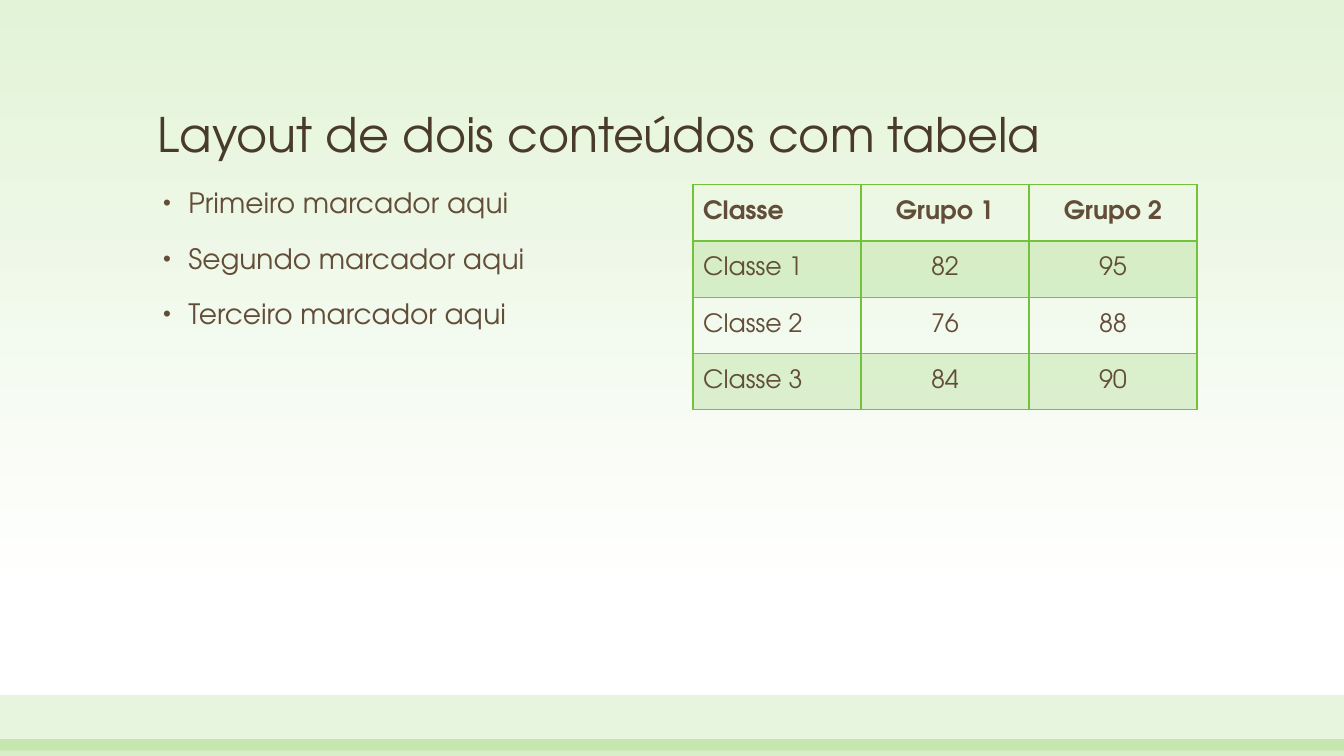
from lxml import etree
from pptx import Presentation
from pptx import util as u
from pptx.dml.color import RGBColor
from pptx.enum import shapes, text
from pptx.oxml.ns import qn

PX = 9525  # EMU per px, 96 px to the inch
WIDTH, HEIGHT = 1280, 720
FONT = "TeX Gyre Adventor"
GREEN = RGBColor(0x72, 0xC2, 0x3C)
PALE_GREEN = RGBColor(0xE3, 0xF3, 0xD8)
WHITE = RGBColor(0xFF, 0xFF, 0xFF)
DARK_BROWN = RGBColor(0x4A, 0x3A, 0x2A)
BROWN = RGBColor(0x62, 0x4D, 0x38)

TITLE = "Layout de dois conteúdos com tabela"
BULLETS = ["Primeiro marcador aqui", "Segundo marcador aqui", "Terceiro marcador aqui"]
ROWS = [
    ["Classe", "Grupo 1", "Grupo 2"],
    ["Classe 1", "82", "95"],
    ["Classe 2", "76", "88"],
    ["Classe 3", "84", "90"],
]


def scaled(box):
    return [value * PX for value in box]


def set_font(paragraph, size, color, bold=False):
    for run in paragraph.runs:
        run.font.name = FONT
        run.font.size = u.Pt(size)
        run.font.bold = bold
        run.font.color.rgb = color


def fill_green(fill, opacity, parent):
    fill.solid()
    fill.fore_color.rgb = GREEN
    color = parent.find(qn("a:solidFill")).find(qn("a:srgbClr"))
    etree.SubElement(color, qn("a:alpha"), val=str(opacity * 1000))


def add_background(slide):
    fill = slide.background.fill
    fill.gradient()
    fill.gradient_angle = 270
    for stop, position, color in zip(fill.gradient_stops, (0, 0.79), (PALE_GREEN, WHITE)):
        stop.position = position
        stop.color.rgb = color


def add_band(slide, box, opacity):
    band = slide.shapes.add_shape(shapes.MSO_SHAPE.RECTANGLE, *scaled(box))
    band.shadow.inherit = False
    band.line.fill.background()
    fill_green(band.fill, opacity, band._element.spPr)


def add_text_frame(slide, box, anchor):
    frame = slide.shapes.add_textbox(*scaled(box)).text_frame
    frame.word_wrap = True
    frame.vertical_anchor = anchor
    return frame


def add_title(slide, box):
    paragraph = add_text_frame(slide, box, text.MSO_ANCHOR.BOTTOM).paragraphs[0]
    paragraph.text = TITLE
    paragraph.line_spacing = 0.9
    set_font(paragraph, 34, DARK_BROWN)


def add_bullets(slide, box):
    frame = add_text_frame(slide, box, text.MSO_ANCHOR.TOP)
    frame.text = "\n".join(BULLETS)
    for index, paragraph in enumerate(frame.paragraphs):
        properties = paragraph._p.get_or_add_pPr()
        properties.set("marL", str(29 * PX))
        properties.set("indent", str(-24 * PX))
        etree.SubElement(properties, qn("a:buSzPct"), val="80000")
        etree.SubElement(properties, qn("a:buFont"), typeface="Arial")
        etree.SubElement(properties, qn("a:buChar"), char="•")
        paragraph.line_spacing = 0.9
        if index:
            paragraph.space_before = u.Pt(18)
        set_font(paragraph, 20, BROWN)


def set_borders(cell, row):
    # The rule under the header is twice as thick
    widths = {"L": 1, "R": 1, "T": 2 if row == 1 else 1, "B": 2 if row == 0 else 1}
    for side, width in widths.items():
        line = etree.SubElement(cell._tc.get_or_add_tcPr(), qn(f"a:ln{side}"), w=str(u.Pt(width)))
        fill = etree.SubElement(line, qn("a:solidFill"))
        etree.SubElement(fill, qn("a:srgbClr"), val=str(GREEN))


def add_class_table(slide, box):
    table = slide.shapes.add_table(len(ROWS), len(ROWS[0]), *scaled(box)).table
    table.horz_banding = False
    for row, values in enumerate(ROWS):
        for column, value in enumerate(values):
            cell = table.cell(row, column)
            cell.text = value
            cell.vertical_anchor = text.MSO_ANCHOR.MIDDLE
            paragraph = cell.text_frame.paragraphs[0]
            paragraph.alignment = text.PP_ALIGN.CENTER if column else text.PP_ALIGN.LEFT
            set_font(paragraph, 18, BROWN, bold=row == 0)
            set_borders(cell, row)
            if row % 2:
                fill_green(cell.fill, 20, cell._tc.tcPr)
            else:
                cell.fill.background()


def main():
    presentation = Presentation()
    presentation.slide_width = WIDTH * PX
    presentation.slide_height = HEIGHT * PX
    slide = presentation.slides.add_slide(presentation.slide_layouts[6])

    # Backdrop
    add_background(slide)
    add_band(slide, (0, 662, WIDTH, 53), 17)
    add_band(slide, (0, 704, WIDTH, 16), 28)

    # Content
    add_title(slide, (141, 46, 998, 114))
    add_class_table(slide, (660, 176, 480, 214))
    add_bullets(slide, (141, 176, 480, 456))

    presentation.save("out.pptx")


if __name__ == "__main__":
    main()
